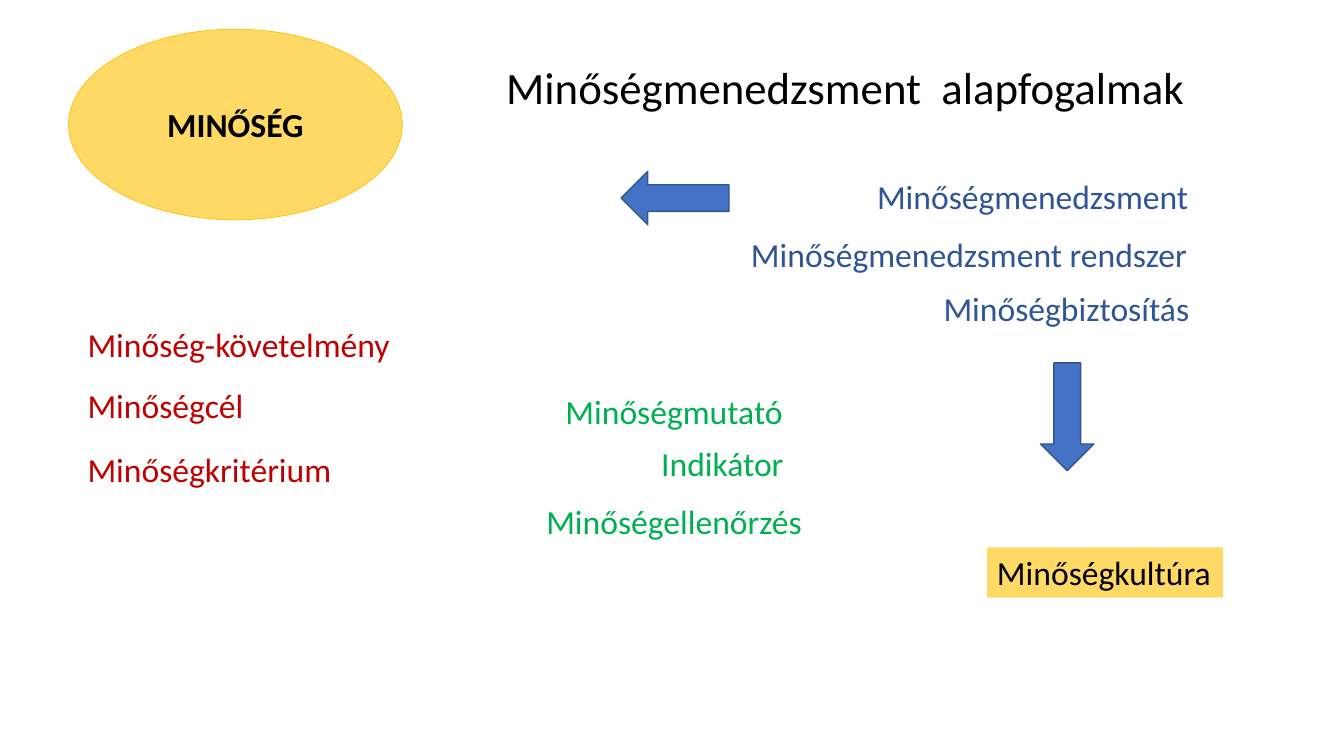
from dataclasses import dataclass

from pptx import Presentation
from pptx.dml.color import RGBColor
from pptx.enum.shapes import MSO_SHAPE
from pptx.enum.text import MSO_ANCHOR, PP_ALIGN
from pptx.util import Inches, Pt

LEFT, CENTER = PP_ALIGN.LEFT, PP_ALIGN.CENTER
TOP, MIDDLE = MSO_ANCHOR.TOP, MSO_ANCHOR.MIDDLE
OVAL, RECT, ARROW = MSO_SHAPE.OVAL, MSO_SHAPE.RECTANGLE, MSO_SHAPE.RIGHT_ARROW
TITLE_ONLY = 5


@dataclass(frozen=True)
class Theme:
    font: str = "Calibri"
    title_size: int = 32
    text_size: int = 24
    black: str = "000000"
    red: str = "C00000"
    green: str = "00B050"
    blue: str = "2F5597"
    gold: str = "FFD966"
    gold_line: str = "FFC000"
    arrow: str = "4472C4"
    arrow_line: str = "325491"


THEME = Theme()

TITLE = "Minőségmenedzsment  alapfogalmak"
QUALITY = "MINŐSÉG"
CULTURE = "Minőségkultúra"

# Term, top, width
REQUIREMENTS = [
    ("Minőség-követelmény", 3.16, 3.23),
    ("Minőségcél", 3.77, 1.76),
    ("Minőségkritérium", 4.4, 2.64),
]
MANAGEMENT = [
    ("Minőségmenedzsment", 1.7, 3.32),
    ("Minőségmenedzsment rendszer", 2.27, 4.57),
    ("Minőségbiztosítás", 2.81, 2.66),
]
INDICATORS = [
    ("Minőségmutató", 3.83, 2.38),
    ("Indikátor", 4.34, 1.43),
]
CONTROL = [("Minőségellenőrzés", 4.92, 2.76)]

# Terms, colour, shared edge, whether that edge is the right one
GROUPS = [
    (REQUIREMENTS, THEME.red, 0.77, False),
    (MANAGEMENT, THEME.blue, 11.92, True),
    (INDICATORS, THEME.green, 7.89, True),
    (CONTROL, THEME.green, 8.08, True),
]
ROW_HEIGHT = 0.5

# Left, top, rotation
ARROWS = [(10.05, 3.87, 90), (6.16, 1.7, 180)]
ARROW_SIZE = (1.07, 0.53)


def inches(*lengths):
    return [Inches(v) for v in lengths]


def write(shape, text, color, size=THEME.text_size, bold=False,
          align=LEFT, anchor=TOP, wrap=False):
    tf = shape.text_frame
    tf.word_wrap = wrap
    tf.vertical_anchor = anchor
    p = tf.paragraphs[0]
    p.alignment = align
    r = p.add_run()
    r.text = text
    r.font.name = THEME.font
    r.font.size = Pt(size)
    r.font.bold = bold
    r.font.color.rgb = RGBColor.from_string(color)


def add_filled(s, kind, box, fill, line=None, line_width=1):
    sp = s.shapes.add_shape(kind, *inches(*box))
    sp.shadow.inherit = False
    sp.fill.solid()
    sp.fill.fore_color.rgb = RGBColor.from_string(fill)
    if line:
        sp.line.color.rgb = RGBColor.from_string(line)
        sp.line.width = Pt(line_width)
    else:
        sp.line.fill.background()
    return sp


def main():
    prs = Presentation()
    prs.slide_width, prs.slide_height = inches(13.33, 7.5)
    s = prs.slides.add_slide(prs.slide_layouts[TITLE_ONLY])

    title = s.shapes.title
    title.left, title.top, title.width, title.height = inches(4.92, 0.54, 7, 0.64)
    write(title, TITLE, THEME.black, THEME.title_size)

    quality = add_filled(s, OVAL, (0.68, 0.29, 3.31, 1.89),
                         THEME.gold, THEME.gold_line, 0.5)
    write(quality, QUALITY, THEME.black, bold=True,
          align=CENTER, anchor=MIDDLE, wrap=True)

    for terms, color, edge, from_right in GROUPS:
        for term, top, width in terms:
            left = edge - width if from_right else edge
            sp = s.shapes.add_textbox(*inches(left, top, width, ROW_HEIGHT))
            write(sp, term, color)

    culture = add_filled(s, RECT, (9.79, 5.43, 2.34, ROW_HEIGHT), THEME.gold)
    write(culture, CULTURE, THEME.black)

    for left, top, rotation in ARROWS:
        arrow = add_filled(s, ARROW, (left, top, *ARROW_SIZE),
                           THEME.arrow, THEME.arrow_line)
        arrow.rotation = rotation

    prs.save("out.pptx")


if __name__ == "__main__":
    main()
